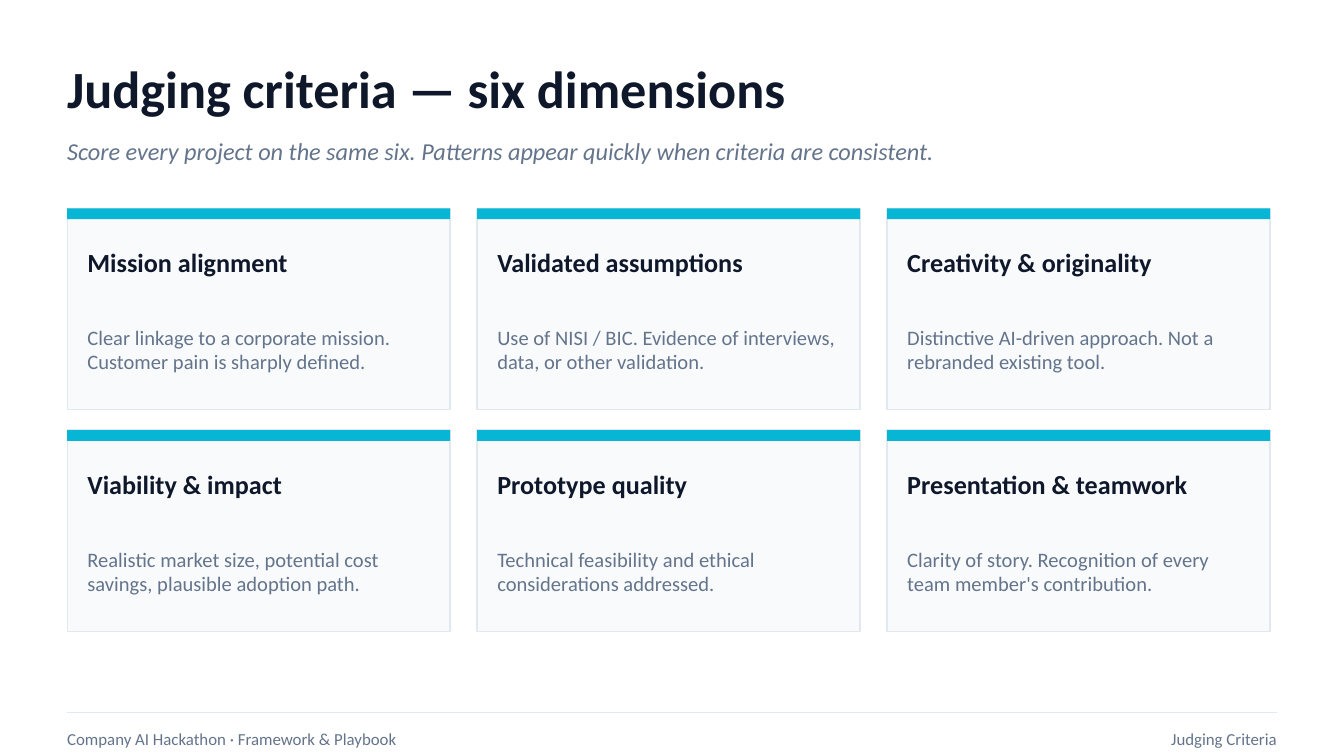
"""Build the judging criteria slide: six cards in a grid of three columns and two rows."""
from lxml.etree import SubElement
from pptx import Presentation
from pptx.dml.color import RGBColor
from pptx.enum.shapes import MSO_CONNECTOR, MSO_SHAPE
from pptx.enum.text import MSO_ANCHOR, MSO_AUTO_SIZE, PP_ALIGN
from pptx.oxml.ns import qn
from pptx.util import Inches, Pt

COLORS = {k: RGBColor.from_string(v) for k, v in {
    "ink": "0F172A", "muted": "64748B", "card": "F8FAFC", "rule": "E2E8F0", "accent": "06B6D4",
}.items()}
CRITERIA = [
    ("Mission alignment", "Clear linkage to a corporate mission. Customer pain is sharply defined."),
    ("Validated assumptions", "Use of NISI / BIC. Evidence of interviews, data, or other validation."),
    ("Creativity & originality", "Distinctive AI-driven approach. Not a rebranded existing tool."),
    ("Viability & impact", "Realistic market size, potential cost savings, plausible adoption path."),
    ("Prototype quality", "Technical feasibility and ethical considerations addressed."),
    ("Presentation & teamwork", "Clarity of story. Recognition of every team member's contribution."),
]
W = 10
H = W * 9 / 16
MARGIN, TOP = 0.5, 1.55
COLS, CARD_W, CARD_H = 3, 2.85, 1.5
GAP_X, GAP_Y, PAD, BAR_H = 0.2, 0.15, 0.15, 0.08

prs = Presentation()
prs.slide_width, prs.slide_height = Inches(W), Inches(H)
s = prs.slides.add_slide(prs.slide_layouts[5])


def put_text(text, x, y, w, h, size, color="muted", bold=False, italic=False,
             align=PP_ALIGN.LEFT, sp=None):
    box = [Inches(v) for v in (x, y, w, h)]
    sp = sp or s.shapes.add_textbox(*box)
    sp.left, sp.top, sp.width, sp.height = box
    tf = sp.text_frame
    tf.word_wrap, tf.auto_size = True, MSO_AUTO_SIZE.NONE
    tf.vertical_anchor = MSO_ANCHOR.MIDDLE
    tf.margin_left = tf.margin_top = tf.margin_right = tf.margin_bottom = 0
    p = tf.paragraphs[0]
    p.alignment = align
    r = p.add_run()
    r.text = text
    r.font.name, r.font.size = "Calibri", Pt(size)
    r.font.bold, r.font.italic = bold, italic
    r.font.color.rgb = COLORS[color]


def put_rect(x, y, w, h, fill, line=None):
    sp = s.shapes.add_shape(MSO_SHAPE.RECTANGLE, *[Inches(v) for v in (x, y, w, h)])
    sp.shadow.inherit = False
    sp.fill.solid()
    sp.fill.fore_color.rgb = COLORS[fill]
    if line:
        sp.line.color.rgb = COLORS[line]
        sp.line.width = Pt(0.75)
    else:
        sp.line.fill.background()


full = W - 2 * MARGIN
put_text("Judging criteria — six dimensions", MARGIN, 0.35, full, 0.6, 28,
         color="ink", bold=True, sp=s.shapes.title)
put_text("Score every project on the same six. Patterns appear quickly when criteria are consistent.",
         MARGIN, 0.95, full, 0.35, 13, italic=True)

for i, (name, detail) in enumerate(CRITERIA):
    row, col = divmod(i, COLS)
    x = MARGIN + col * (CARD_W + GAP_X)
    y = TOP + row * (CARD_H + GAP_Y)
    put_rect(x, y, CARD_W, CARD_H, "card", line="rule")
    put_rect(x, y, CARD_W, BAR_H, "accent")
    put_text(name, x + PAD, y + 0.2, CARD_W - 2 * PAD, 0.4, 14, color="ink", bold=True)
    put_text(detail, x + PAD, y + 0.65, CARD_W - 2 * PAD, 0.8, 11)

rule = s.shapes.add_connector(MSO_CONNECTOR.STRAIGHT, Inches(MARGIN), Inches(5.3),
                              Inches(W - MARGIN), Inches(5.3))
rule.line.color.rgb = COLORS["rule"]
rule.line.width = Pt(0.75)
SubElement(rule._element.spPr, qn("a:effectLst"))
put_text("Company AI Hackathon · Framework & Playbook", MARGIN, 5.35, 5.5, 0.3, 9)
put_text("Judging Criteria", 6, 5.35, 3.5, 0.3, 9, align=PP_ALIGN.RIGHT)

prs.save("out.pptx")
